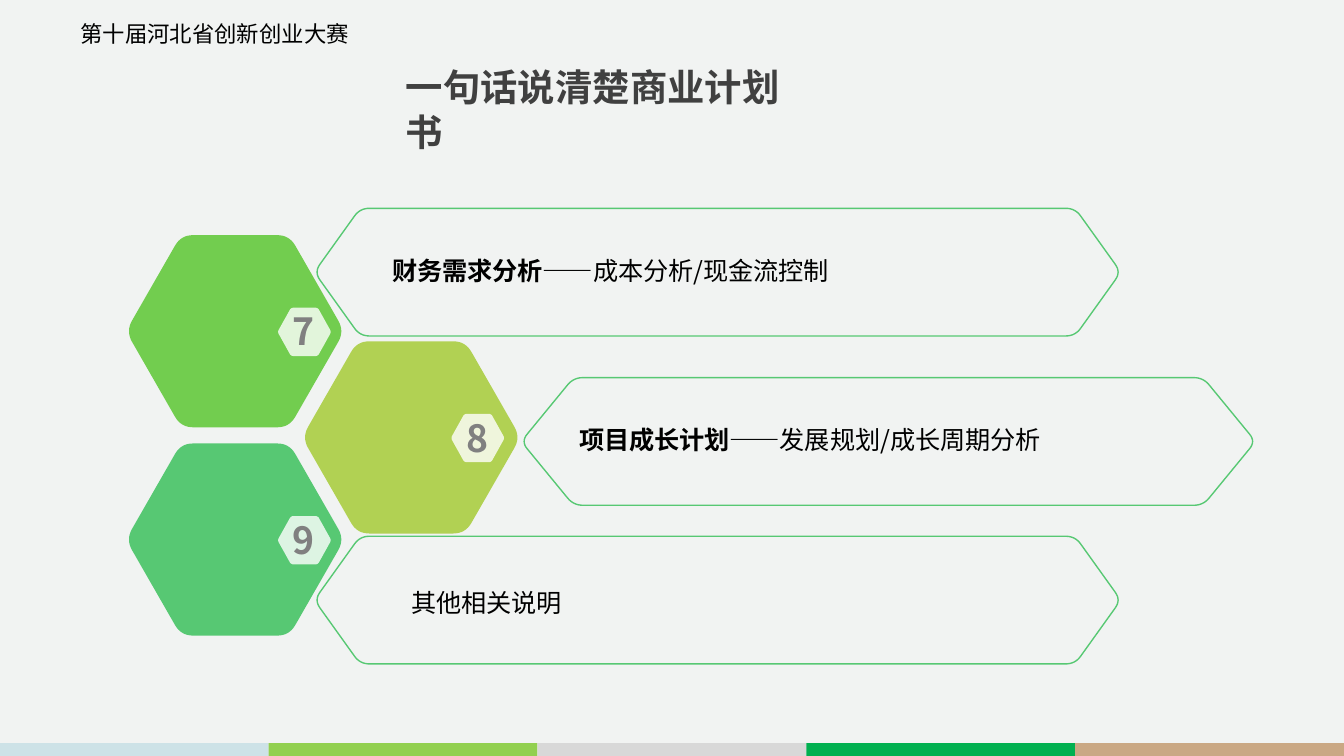
from math import hypot

from lxml import etree
from pptx import Presentation
from pptx.dml.color import RGBColor
from pptx.enum.shapes import MSO_SHAPE as Shape
from pptx.enum.text import PP_ALIGN as Align
from pptx.oxml.ns import qn
from pptx.util import Inches, Pt

COLORS = {
    "background": "F1F3F2", "black": "000000", "title": "404040",
    "number": "808080", "white": "FFFFFF", "outline": "57C873",
    "leaf": "72CD4F", "lime": "B1D153", "emerald": "57C873",
}
FOOTER_COLORS = ["CDE2E7", "92D050", "D8D8D8", "00B050", "CAA884"]
SANS = "Noto Sans CJK SC"


def rgb(name):
    return RGBColor.from_string(COLORS.get(name, name))


class SlideBuilder:
    def __init__(self, slide):
        self.slide = slide
        slide.background.fill.solid()
        slide.background.fill.fore_color.rgb = rgb("background")

    def paint(self, shape, fill=None, line=None, opacity=None):
        shape.shadow.inherit = False
        if fill:
            shape.fill.solid()
            shape.fill.fore_color.rgb = rgb(fill)
        else:
            shape.fill.background()
        if line:
            shape.line.color.rgb = rgb(line)
            shape.line.width = Pt(0.75)
        else:
            shape.line.fill.background()
        if opacity:
            color = shape._element.spPr.find(qn("a:solidFill"))[0]
            etree.SubElement(color, qn("a:alpha"), val=str(opacity * 1000))

    def rectangle(self, left, top, width, height, fill):
        shape = self.slide.shapes.add_shape(
            Shape.RECTANGLE, Inches(left), Inches(top), Inches(width), Inches(height))
        self.paint(shape, fill)

    def hexagon(self, left, top, width, height, run, cut, **paint):
        """Draw a rounded hexagon; run is the width of a slanted side,
        cut the length that rounding takes from each edge at a corner."""
        overshoot = cut * run / hypot(run, height / 2) / 2
        x1, x2 = left - overshoot, left + width + overshoot
        middle, bottom = top + height / 2, top + height
        corners = [(x1 + run, top), (x2 - run, top), (x2, middle),
                   (x2 - run, bottom), (x1 + run, bottom), (x1, middle)]

        def toward(start, end):
            part = cut / hypot(end[0] - start[0], end[1] - start[1])
            return [a + (b - a) * part for a, b in zip(start, end)]

        points = []
        steps = 8
        for index, corner in enumerate(corners):
            entry = toward(corner, corners[index - 1])
            leave = toward(corner, corners[(index + 1) % 6])
            for step in range(steps + 1):
                t = step / steps
                points.append([
                    Inches((1 - t) ** 2 * a + 2 * t * (1 - t) * b + t ** 2 * c)
                    for a, b, c in zip(entry, corner, leave)])
        builder = self.slide.shapes.build_freeform(*points[0])
        builder.add_line_segments(points[1:], close=True)
        self.paint(builder.convert_to_shape(), **paint)

    def text(self, left, top, width, height, parts, size, color="black", font=SANS,
             align=Align.LEFT, spacing=None, inset=True):
        """Write one paragraph; parts holds pairs of wording and boldness."""
        box = self.slide.shapes.add_textbox(
            Inches(left), Inches(top), Inches(width), Inches(height))
        frame = box.text_frame
        frame.word_wrap = True
        if not inset:
            frame.margin_left = frame.margin_right = 0
            frame.margin_top = frame.margin_bottom = 0
        paragraph = frame.paragraphs[0]
        paragraph.alignment = align
        if spacing:
            paragraph.line_spacing = Pt(spacing)
        for wording, bold in parts:
            run = paragraph.add_run()
            run.text = wording
            run.font.size = Pt(size)
            run.font.bold = bold
            run.font.color.rgb = rgb(color)
            run.font.name = font
            etree.SubElement(run._r.rPr, qn("a:ea"), typeface=font)

    def numbered_hexagon(self, left, top, badge_offset, number, fill):
        self.hexagon(left, top, 1.58, 1.43, 0.41, 0.09, fill=fill)
        badge_left, badge_top = left + badge_offset, top + 0.54
        self.hexagon(badge_left, badge_top, 0.39, 0.36, 0.1, 0.02,
                     fill="white", opacity=80)
        self.text(badge_left + 0.08, badge_top, 0.22, 0.34, [(number, True)],
                  20, "number", align=Align.CENTER, spacing=24.4, inset=False)


def main():
    presentation = Presentation()
    presentation.slide_width = Inches(10)
    presentation.slide_height = Inches(10) * 9 // 16
    builder = SlideBuilder(presentation.slides.add_slide(presentation.slide_layouts[6]))

    for index, color in enumerate(FOOTER_COLORS):
        builder.rectangle(2 * index, 5.53, 2, 0.1, color)
    builder.text(0.5, 0.1, 5.56, 0.3, [("第十届河北省创新创业大赛", False)], 12,
                 font="Calibri")

    for left, top, badge_offset, number, fill in [
        (0.96, 1.75, 1.11, "7", "leaf"),
        (2.27, 2.54, 1.09, "8", "lime"),
        (0.96, 3.3, 1.11, "9", "emerald"),
    ]:
        builder.numbered_hexagon(left, top, badge_offset, number, fill)

    for left, top, width, run, text_left, text_top, text_width, parts in [
        (2.36, 1.55, 5.96, 0.34, 2.92, 1.93, 5.24,
         [("财务需求分析", True), ("——成本分析/现金流控制", False)]),
        (3.9, 2.81, 5.42, 0.39, 4.31, 3.19, 5.18,
         [("项目成长计划", True), ("——发展规划/成长周期分析", False)]),
        (2.36, 3.99, 5.96, 0.34, 3.06, 4.4, 2.62, [("其他相关说明", False)]),
    ]:
        builder.hexagon(left, top, width, 0.95, run, 0.07, line="outline")
        builder.text(text_left, text_top, text_width, 0.2, parts, 13.5,
                     align=Align.JUSTIFY, spacing=14, inset=False)

    builder.text(2.92, 0.42, 3.22, 0.44, [("一句话说清楚商业计划书", True)], 20, "title",
                 spacing=24.4)

    presentation.save("out.pptx")


if __name__ == "__main__":
    main()
